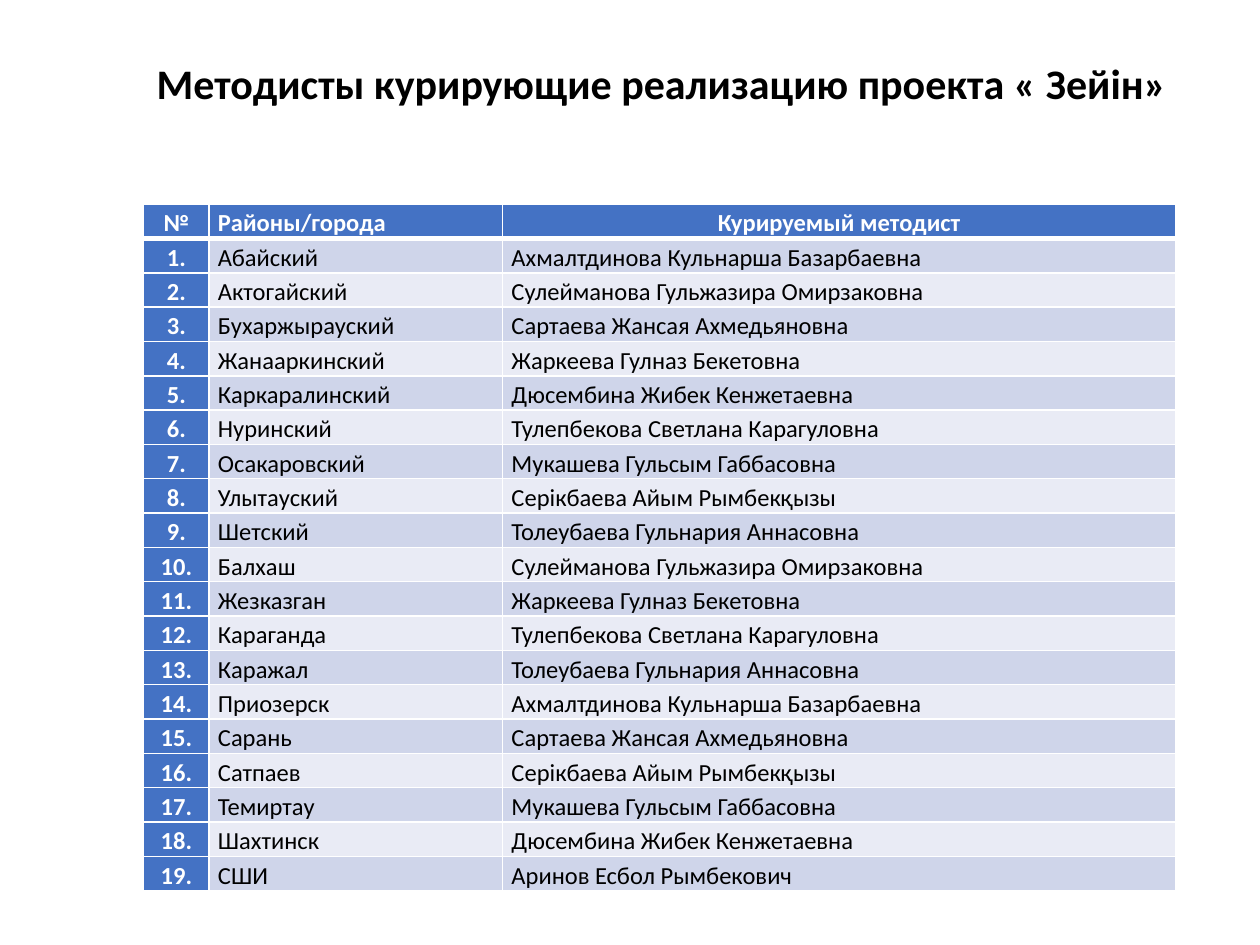
from lxml.etree import SubElement
from pptx import Presentation
from pptx.dml.color import RGBColor
from pptx.enum.text import MSO_ANCHOR, PP_ALIGN
from pptx.oxml.ns import qn
from pptx.util import Inches, Pt

# Content
TITLE = "Методисты курирующие реализацию проекта « Зейін» "
HEADER = ("№", "Районы/города", "Курируемый методист")
CURATORS = [
    ("Абайский", "Ахмалтдинова Кульнарша Базарбаевна"),
    ("Актогайский", "Сулейманова Гульжазира Омирзаковна"),
    ("Бухаржырауский", "Сартаева Жансая Ахмедьяновна"),
    ("Жанааркинский", "Жаркеева Гулназ Бекетовна"),
    ("Каркаралинский", "Дюсембина Жибек Кенжетаевна"),
    ("Нуринский", "Тулепбекова Светлана Карагуловна"),
    ("Осакаровский", "Мукашева Гульсым Габбасовна"),
    ("Улытауский", "Серікбаева Айым Рымбекқызы"),
    ("Шетский", "Толеубаева Гульнария Аннасовна"),
    ("Балхаш", "Сулейманова Гульжазира Омирзаковна"),
    ("Жезказган", "Жаркеева Гулназ Бекетовна"),
    ("Караганда", "Тулепбекова Светлана Карагуловна"),
    ("Каражал", "Толеубаева Гульнария Аннасовна"),
    ("Приозерск", "Ахмалтдинова Кульнарша Базарбаевна"),
    ("Сарань", "Сартаева Жансая Ахмедьяновна"),
    ("Сатпаев", "Серікбаева Айым Рымбекқызы"),
    ("Темиртау", "Мукашева Гульсым Габбасовна"),
    ("Шахтинск", "Дюсембина Жибек Кенжетаевна"),
    ("СШИ", "Аринов Есбол Рымбекович"),
]

# Format
WHITE, BLACK, BLUE = "FFFFFF", "000000", "4472C4"
BANDS = ("E9EBF5", "CFD5EA")
COLUMN_WIDTHS = (0.52, 2.33, 5.34)
ROW_HEIGHT = 0.27
TITLE_BOX = {"left": 0.98, "top": -0.04, "width": 8.62, "height": 1.45}
CELL_MARGINS = {"margin_left": 0.07, "margin_right": 0.07,
                "margin_top": 0, "margin_bottom": 0}


def set_lengths(target, lengths):
    for name, value in lengths.items():
        setattr(target, name, Inches(value))


def set_color(color_format, color):
    color_format.rgb = RGBColor.from_string(color)


def write_text(text_frame, text, size, color, bold, alignment, spacing):
    text_frame.text = text
    paragraph = text_frame.paragraphs[0]
    paragraph.alignment = alignment
    paragraph.line_spacing = spacing
    font = paragraph.runs[0].font
    for name, value in {"name": "Calibri", "size": Pt(size), "bold": bold}.items():
        setattr(font, name, value)
    set_color(font.color, color)


def add_borders(cell, bottom_width):
    properties = cell._tc.get_or_add_tcPr()
    for side, width in {"L": 1, "R": 1, "T": 1, "B": bottom_width}.items():
        line = SubElement(properties, qn(f"a:ln{side}"), w=str(Pt(width)))
        fill = SubElement(line, qn("a:solidFill"))
        SubElement(fill, qn("a:srgbClr"), val=WHITE)


def format_cell(cell, text, row, column):
    is_header = row == 0
    is_label = is_header or column == 0
    centered = column == 0 or (is_header and column == 2)
    set_lengths(cell, CELL_MARGINS)
    add_borders(cell, 3 if is_header else 1)
    cell.fill.solid()
    set_color(cell.fill.fore_color, BLUE if is_label else BANDS[row % 2])
    write_text(cell.text_frame, text, 14, WHITE if is_label else BLACK, is_label,
               PP_ALIGN.CENTER if centered else PP_ALIGN.LEFT, 1.15)


def main():
    presentation = Presentation()
    set_lengths(presentation, {"slide_width": 10, "slide_height": 7.5})
    slide = presentation.slides.add_slide(presentation.slide_layouts[5])

    # Title
    title = slide.shapes.title
    set_lengths(title, TITLE_BOX)
    title.text_frame.vertical_anchor = MSO_ANCHOR.MIDDLE
    write_text(title.text_frame, TITLE, 24, BLACK, True, PP_ALIGN.CENTER, 0.9)

    # Table of districts and their curators
    rows = [HEADER] + [(f"{number}.", *curator)
                       for number, curator in enumerate(CURATORS, 1)]
    table = slide.shapes.add_table(
        len(rows), len(HEADER), Inches(1.14), Inches(1.62),
        Inches(sum(COLUMN_WIDTHS)), Inches(ROW_HEIGHT * len(rows))).table
    for column, width in zip(table.columns, COLUMN_WIDTHS):
        column.width = Inches(width)
    for row_index, texts in enumerate(rows):
        table.rows[row_index].height = Inches(ROW_HEIGHT)
        for column_index, text in enumerate(texts):
            format_cell(table.cell(row_index, column_index), text,
                        row_index, column_index)

    presentation.save("out.pptx")


if __name__ == "__main__":
    main()
